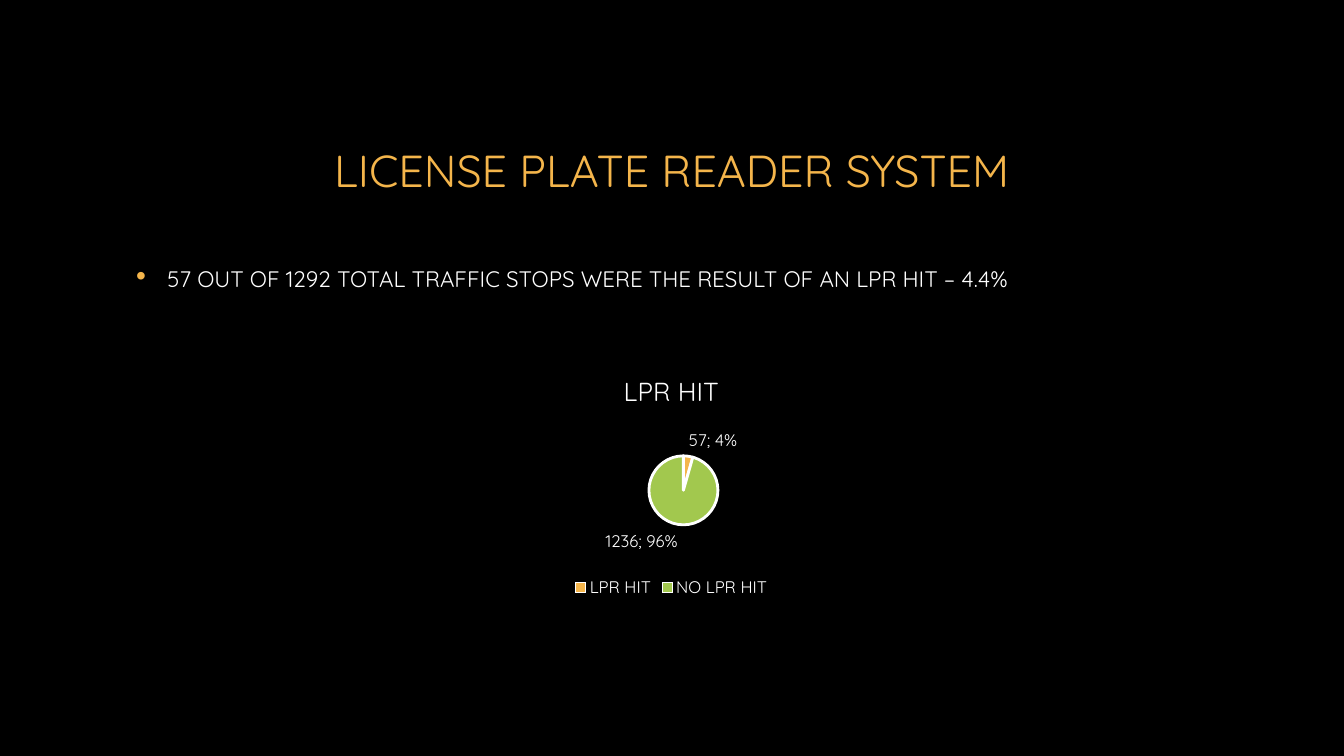
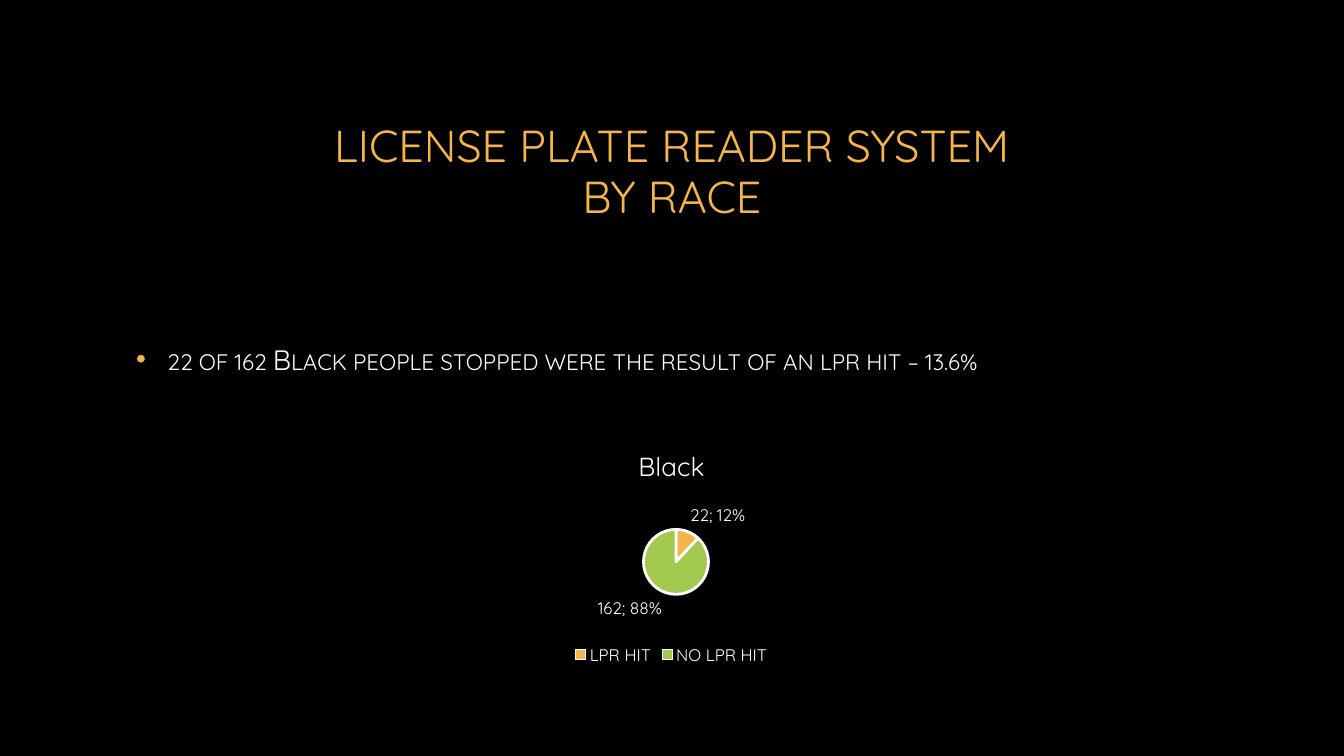
from lxml.etree import SubElement
from pptx import Presentation
from pptx.chart.data import CategoryChartData
from pptx.dml.color import RGBColor
from pptx.enum.chart import XL_CHART_TYPE, XL_LABEL_POSITION, XL_LEGEND_POSITION
from pptx.enum.text import MSO_ANCHOR, MSO_AUTO_SIZE, PP_ALIGN
from pptx.oxml import parse_xml
from pptx.oxml.ns import nsdecls, qn
from pptx.util import Inches, Pt

BLACK = RGBColor(0x00, 0x00, 0x00)
WHITE = RGBColor(0xFF, 0xFF, 0xFF)
AMBER = RGBColor(0xF4, 0xB5, 0x4B)
GREEN = RGBColor(0xA2, 0xC8, 0x4E)
FONT = "Quicksand"
LEFT, WIDTH = 1.25, 10.83


def style(font, size, color=WHITE):
    font.name = FONT
    font.size = Pt(size)
    font.bold = False
    font.color.rgb = color


def write(frame, text, size, color=WHITE, align=PP_ALIGN.LEFT, small=False):
    """Fill a frame with one paragraph; a newline becomes a line break."""
    frame.word_wrap = True
    frame.auto_size = MSO_AUTO_SIZE.NONE
    frame.vertical_anchor = MSO_ANCHOR.MIDDLE
    para = frame.paragraphs[0]
    para.text = text
    para.alignment = align
    for run in para.runs:
        style(run.font, size, color)
        if small:
            run.font._element.set("cap", "small")
    return para


class Deck:
    def __init__(self):
        self.prs = Presentation()
        self.prs.slide_width = Inches(13.33)
        self.prs.slide_height = Inches(7.5)
        fill = self.prs.slide_master.background.fill
        fill.solid()
        fill.fore_color.rgb = BLACK
        self.slide = None

    def add(self, title):
        self.slide = self.prs.slides.add_slide(self.prs.slide_layouts[1])
        shape = self.slide.shapes.title
        self.place(shape, 0.67, 2.08)
        para = write(shape.text_frame, title, 32, AMBER, PP_ALIGN.CENTER)
        para.line_spacing = 0.95

    def place(self, shape, top, height):
        shape.left, shape.width = Inches(LEFT), Inches(WIDTH)
        shape.top, shape.height = Inches(top), Inches(height)

    def bullet(self, text, top):
        shape = self.slide.placeholders[1]
        self.place(shape, top, 1.28)
        para = write(shape.text_frame, text, 20, small=True)
        para.space_after = Pt(6)
        props = para._p.get_or_add_pPr()
        props.set("marL", str(Inches(0.31)))
        props.set("indent", str(-Inches(0.31)))
        color = SubElement(props, qn("a:buClr"))
        SubElement(color, qn("a:srgbClr"), val=str(AMBER))
        SubElement(props, qn("a:buFont"), typeface="Arial")
        SubElement(props, qn("a:buChar"), char="•")

    def pie(self, title, name, values, box):
        data = CategoryChartData()
        data.categories = ["LPR HIT", "NO LPR HIT"]
        data.add_series(name, values)
        frame = self.slide.shapes.add_chart(
            XL_CHART_TYPE.PIE, *map(Inches, box), data)
        chart = frame.chart
        style(chart.font, 10)
        chart.has_title = True
        para = chart.chart_title.text_frame.paragraphs[0]
        para.text = title
        style(para.runs[0].font, 18.6)
        chart.has_legend = True
        chart.legend.position = XL_LEGEND_POSITION.BOTTOM
        chart.legend.include_in_layout = False
        style(chart.legend.font, 12)

        plot = chart.plots[0]
        plot.vary_by_categories = True
        for i, color in enumerate((AMBER, GREEN)):
            form = plot.series[0].points[i].format
            form.fill.solid()
            form.fill.fore_color.rgb = color
            form.line.color.rgb = WHITE
            form.line.width = Pt(2)
        self.label(plot.series[0].data_labels)

    def label(self, labels):
        labels.show_value = True
        labels.show_percentage = True
        labels.position = XL_LABEL_POSITION.OUTSIDE_END
        style(labels.font, 12)
        mark = parse_xml(f"<c:separator {nsdecls('c')}>; </c:separator>")
        labels._element.find(qn("c:showBubbleSize")).addnext(mark)


def main():
    deck = Deck()
    deck.add("LICENSE PLATE READER SYSTEM")
    deck.bullet("57 out of 1292 total traffic stops were the result "
                "of an lpr hit – 4.4%", 2.1)
    deck.pie("LPR HIT", "LPR HIT", (57, 1236), (4.48, 3.54, 4.36, 2.43))

    deck.add("LICENSE PLATE READER SYSTEM\nBY RACE")
    deck.bullet("22 of 162 Black people stopped were the result "
                "of an lpr hit – 13.6%", 2.92)
    deck.pie("Black", "Series 1", (22, 162), (3.79, 4.29, 5.74, 2.35))
    deck.prs.save("out.pptx")


if __name__ == "__main__":
    main()
